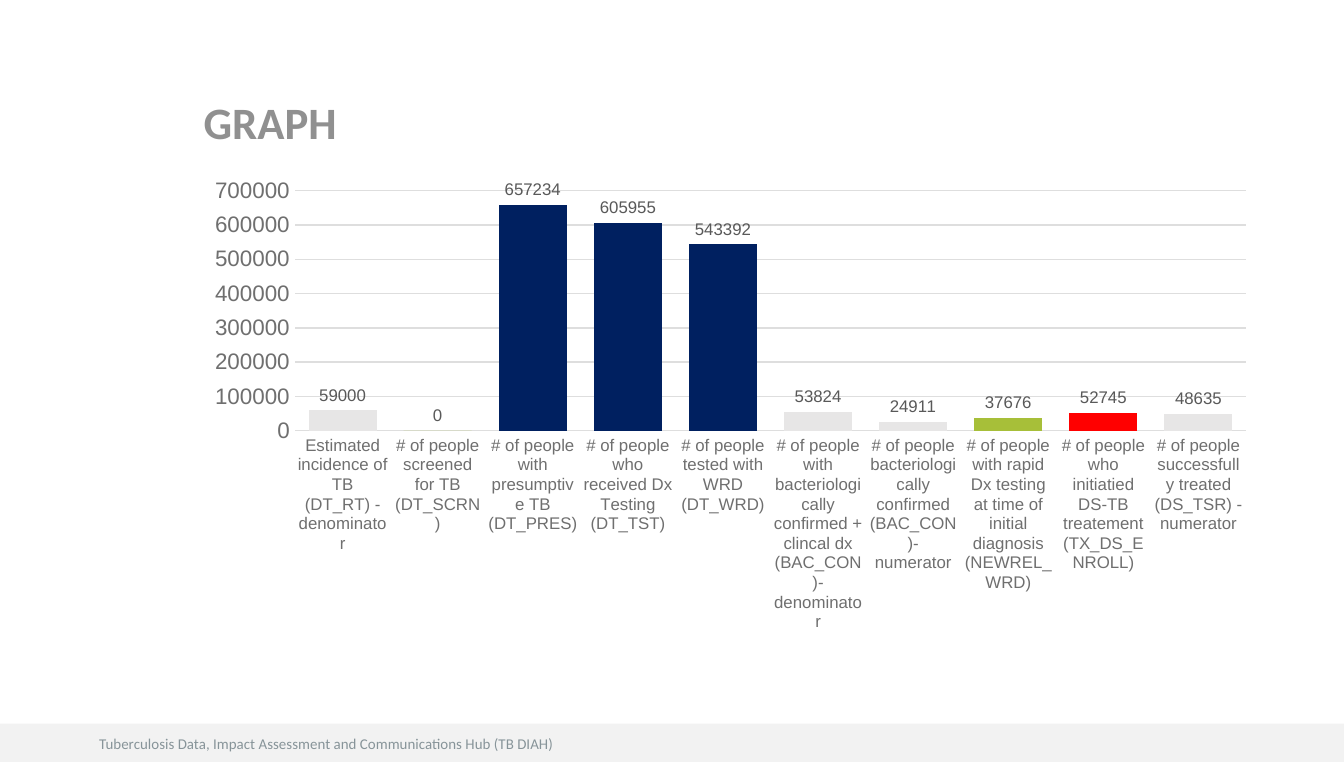
from pptx import Presentation
from pptx import util as u
from pptx.chart.data import CategoryChartData
from pptx.dml.color import RGBColor
from pptx.enum import chart as ch, shapes, text
from pptx.oxml import ns

Pt = u.Pt


def rgb(value):
    return RGBColor.from_string(value)


def style(font, name, size, color, bold=False):
    font.name, font.size, font.bold = name, Pt(size), bold
    font.color.rgb = rgb(color)


prs = Presentation()
prs.slide_width, prs.slide_height = Pt(720), Pt(408)
s = prs.slides.add_slide(prs.slide_layouts[6])

# Footer band
sp = s.shapes.add_shape(shapes.MSO_SHAPE.RECTANGLE, Pt(0), Pt(387.4), Pt(720), Pt(20.6))
sp.shadow.inherit = False
sp.fill.solid()
sp.fill.fore_color.rgb = rgb("F2F2F2")
sp.line.fill.background()

# Footer and title: left, top, width, height, insets, anchor, wording, size, colour, bold
for x, y, w, h, dx, dy, anchor, words, size, color, bold in [
    (46.1, 390, 360, 17, 7.2, 3.6, text.MSO_ANCHOR.TOP,
     "Tuberculosis Data, Impact Assessment and Communications Hub (TB DIAH)", 8, "879499", False),
    (103.7, 42.5, 575.3, 49, 5.4, 2.7, text.MSO_ANCHOR.MIDDLE, "GRAPH", 24, "909090", True),
]:
    tf = s.shapes.add_textbox(Pt(x), Pt(y), Pt(w), Pt(h)).text_frame
    tf.word_wrap = True
    tf.vertical_anchor = anchor
    tf.margin_left = tf.margin_right = Pt(dx)
    tf.margin_top = tf.margin_bottom = Pt(dy)
    p = tf.paragraphs[0]
    p.text = words
    if bold:
        p.line_spacing = 0.9
    style(p.runs[0].font, "Calibri", size, color, bold)

# Care cascade: category, value, bar colour
cascade = [
    ("Estimated incidence of TB (DT_RT) - denominator", 59000, "E7E6E6"),
    ("# of people screened for TB (DT_SCRN)", 0, "A7BF39"),
    ("# of people with presumptive TB (DT_PRES)", 657234, "002060"),
    ("# of people who received Dx Testing (DT_TST)", 605955, "002060"),
    ("# of people tested with WRD (DT_WRD)", 543392, "002060"),
    ("# of people with bacteriologically confirmed + clincal dx (BAC_CON)- denominator", 53824, "E7E6E6"),
    ("# of people bacteriologically confirmed (BAC_CON)- numerator", 24911, "E7E6E6"),
    ("# of people with rapid Dx testing at time of initial diagnosis (NEWREL_WRD)", 37676, "A7BF39"),
    ("# of people who initiatied DS-TB treatement (TX_DS_ENROLL)", 52745, "FF0000"),
    ("# of people successfully treated (DS_TSR) - numerator", 48635, "E7E6E6"),
]
data = CategoryChartData(number_format="0")
data.categories = [row[0] for row in cascade]
data.add_series("Series 1", [row[1] for row in cascade])
chart = s.shapes.add_chart(ch.XL_CHART_TYPE.COLUMN_CLUSTERED,
                           Pt(103.7), Pt(90.7), Pt(575.3), Pt(252.7), data).chart
chart.has_legend = False
chart.has_title = False
style(chart.font, "Arial", 10, "222222")

# Bars
plot = chart.plots[0]
plot.vary_by_categories = False
plot.gap_width, plot.overlap = 40, -77
series = plot.series[0]
series.format.fill.solid()
series.format.fill.fore_color.rgb = rgb("A7BF39")
for i, (_, _, color) in enumerate(cascade):
    if color != "A7BF39":
        fill = series.points[i].format.fill
        fill.solid()
        fill.fore_color.rgb = rgb(color)

# Value labels
labels = series.data_labels
labels.show_value = True
labels.position = ch.XL_LABEL_POSITION.OUTSIDE_END
labels.number_format, labels.number_format_is_linked = "0", False
style(labels.font, "Arial", 9, "595959")

# Axes
cat, val = chart.category_axis, chart.value_axis
for axis, size in ((cat, 9), (val, 12)):
    axis.major_tick_mark = axis.minor_tick_mark = ch.XL_TICK_MARK.NONE
    style(axis.tick_labels.font, "Arial", size, "6F6F6F")
    # Level labels wrap instead of turning
    body = axis._element.find(ns.qn("c:txPr")).find(ns.qn("a:bodyPr"))
    body.set("rot", "0")
    body.set("vert", "horz")
val.minimum_scale, val.maximum_scale, val.major_unit = 0, 700000, 100000
val.tick_labels.number_format, val.tick_labels.number_format_is_linked = "0", False
val.format.line.fill.background()
val.has_major_gridlines = True
for line in (cat.format.line, val.major_gridlines.format.line):
    line.color.rgb = rgb("DEDEDE")
    line.width = Pt(0.75)

prs.save("out.pptx")
